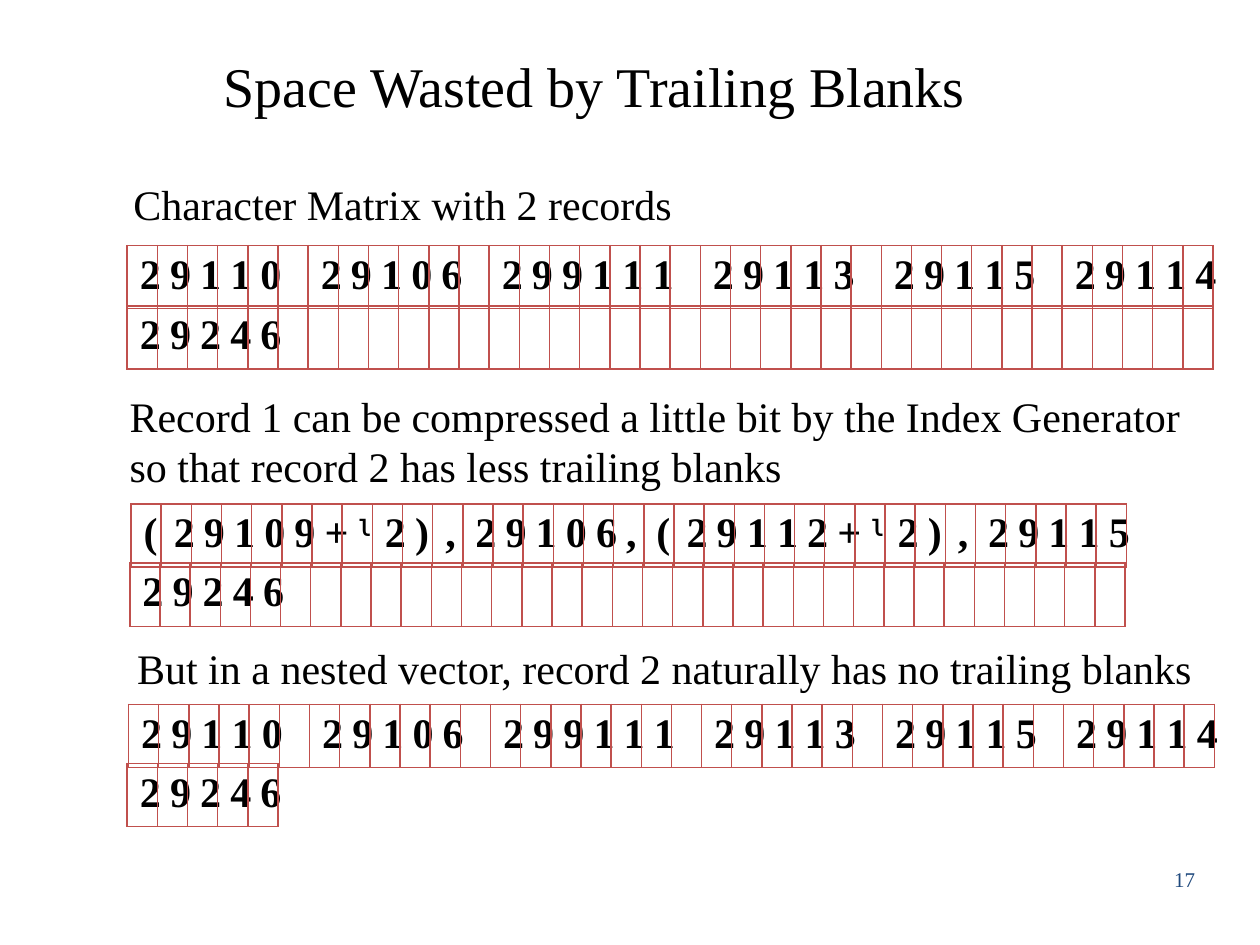
from lxml import etree
from pptx import Presentation
from pptx.dml.color import RGBColor
from pptx.enum.text import PP_ALIGN
from pptx.oxml.ns import qn
from pptx.util import Inches, Pt

CENTER, LEFT = PP_ALIGN.CENTER, PP_ALIGN.LEFT
WIDTH, HEIGHT = Inches(10), Inches(7.5)
CELL_W, CELL_H = 2.28, 5.47  # percent of the slide's width and height
BLACK, RED, NAVY = "000000", "C0504D", "1F497D"
SERIF, MONO = "Times New Roman", "Courier New"

BODY = {"size": Pt(24), "name": SERIF, "bold": False}
TITLE = {**BODY, "size": Pt(32)}
NUMBER = {**BODY, "size": Pt(12)}
DIGIT = {**BODY, "bold": True}
IOTA = {"size": Pt(18), "name": MONO, "bold": False}

FULL = "29110 29106 299111 29113 29115 29114"
COMPRESSED = "(29109+⍳2),29106,(29112+⍳2),29115"
SHORT = "29246"

# caption, its box, then (text, number of cells, left, top) for each record;
# boxes are in percent of the slide
SECTIONS = [
    ("Character Matrix with 2 records", (9.6, 18.27, 54.3, 6.67),
     [(FULL, len(FULL), 10.1, 26), (SHORT, len(FULL), 10.1, 32.4)]),
    ("Record 1 can be compressed a little bit by the Index Generator "
     "so that record 2 has less trailing blanks", (9.3, 40.67, 86.2, 12.13),
     [(COMPRESSED, len(COMPRESSED), 10.4, 53.33),
      (SHORT, len(COMPRESSED), 10.3, 59.6)]),
    ("But in a nested vector, record 2 naturally has no trailing blanks",
     (9.9, 67.33, 86.6, 6.67),
     [(FULL, len(FULL), 10.2, 74.53), (SHORT, len(SHORT), 10.1, 80.8)]),
]


def rgb(color):
    return RGBColor.from_string(color)


def place(left, top, width, height):
    """Turn percentages of the slide into lengths."""
    return (int(WIDTH * left / 100), int(HEIGHT * top / 100),
            int(WIDTH * width / 100), int(HEIGHT * height / 100))


def write(p, text, formats, color=BLACK):
    r = p.add_run()
    r.text = text
    for key, value in formats.items():
        setattr(r.font, key, value)
    r.font.color.rgb = rgb(color)


def add_text(s, box, text, formats, color=BLACK, align=LEFT, wrap=True):
    tf = s.shapes.add_textbox(*place(*box)).text_frame
    tf.word_wrap = wrap
    p = tf.paragraphs[0]
    p.alignment = align
    write(p, text, formats, color)


def add_borders(cell, color):
    tc_pr = cell._tc.get_or_add_tcPr()
    for i, side in enumerate(("a:lnL", "a:lnR", "a:lnT", "a:lnB")):
        ln = etree.Element(qn(side), w=str(Pt(1)))
        fill = etree.SubElement(ln, qn("a:solidFill"))
        etree.SubElement(fill, qn("a:srgbClr"), val=color)
        tc_pr.insert(i, ln)


def add_record(s, text, count, left, top):
    """One row of cells, one character to a cell, blanks at the end."""
    box = place(left, top, count * CELL_W, CELL_H)
    table = s.shapes.add_table(1, count, *box).table
    table.first_row = table.horz_banding = False
    for cell, char in zip(table.rows[0].cells, text.ljust(count)):
        cell.fill.background()
        add_borders(cell, RED)
        p = cell.text_frame.paragraphs[0]
        p.font.size = DIGIT["size"]
        if char != " ":
            write(p, char, IOTA if char == "⍳" else DIGIT)


def add_section(s, caption, box, records):
    add_text(s, box, caption, BODY)
    for record in records:
        add_record(s, *record)


def main():
    prs = Presentation()
    prs.slide_width, prs.slide_height = WIDTH, HEIGHT
    s = prs.slides.add_slide(prs.slide_layouts[6])

    # Title
    add_text(s, (2.9, 4.8, 88.6, 8.53), "Space Wasted by Trailing Blanks",
             TITLE, align=CENTER)
    # Captions with their records
    for section in SECTIONS:
        add_section(s, *section)
    # Slide number
    add_text(s, (92.2, 91.07, 3.7, 4), "17", NUMBER, NAVY, wrap=False)

    prs.save("out.pptx")


if __name__ == "__main__":
    main()
